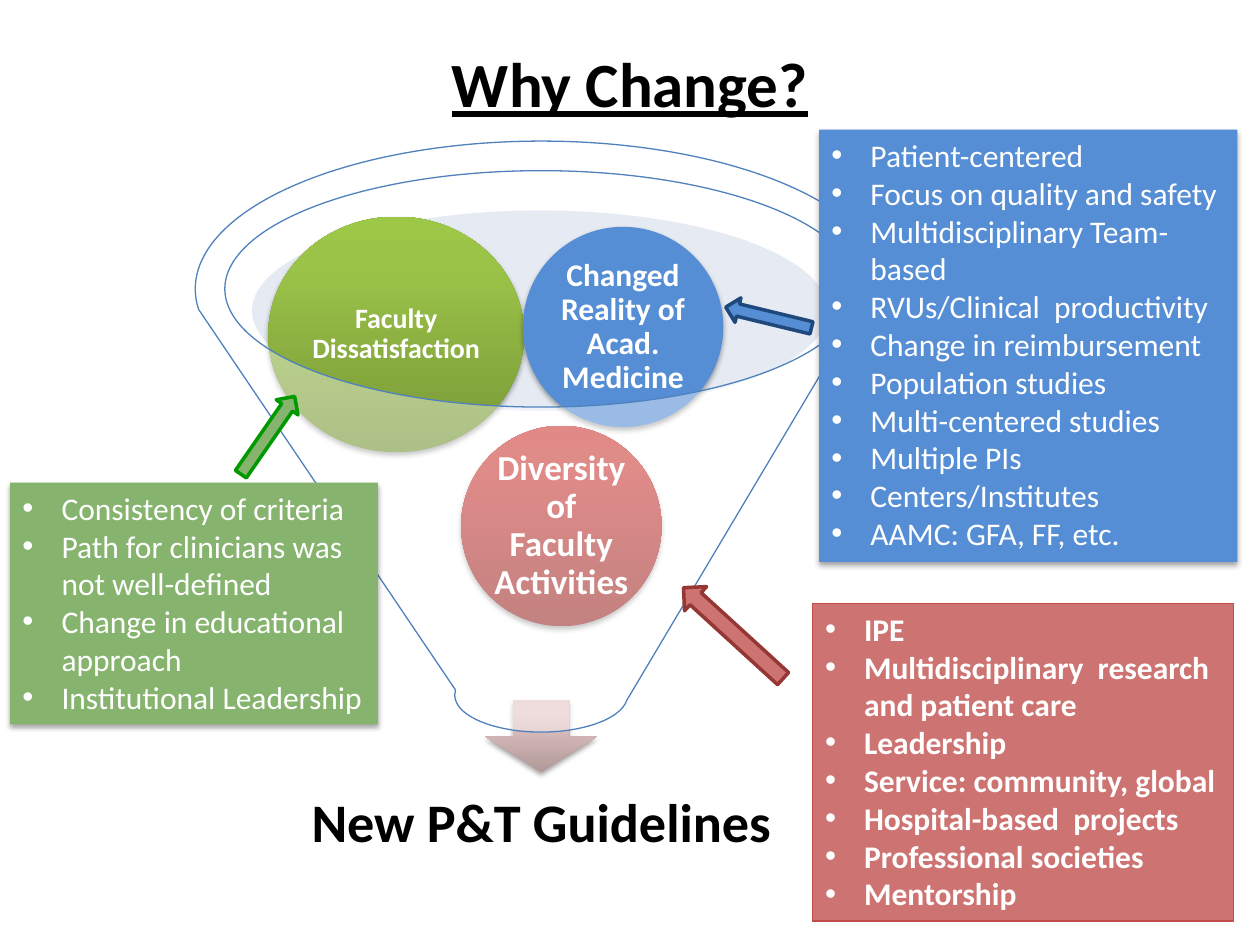
from copy import deepcopy

from lxml import etree
from pptx import Presentation
from pptx.dml.color import RGBColor
from pptx.enum.shapes import MSO_SHAPE
from pptx.enum.text import MSO_ANCHOR, MSO_AUTO_SIZE, PP_ALIGN
from pptx.oxml.ns import qn
from pptx.util import Inches, Pt

OVAL, RECT, FUNNEL = MSO_SHAPE.OVAL, MSO_SHAPE.RECTANGLE, MSO_SHAPE.FUNNEL
DOWN, LEFT, UP = MSO_SHAPE.DOWN_ARROW, MSO_SHAPE.LEFT_ARROW, MSO_SHAPE.UP_ARROW
TOP, MIDDLE = MSO_ANCHOR.TOP, MSO_ANCHOR.MIDDLE
START, CENTER = PP_ALIGN.LEFT, PP_ALIGN.CENTER
FIT = MSO_AUTO_SIZE.SHAPE_TO_FIT_TEXT
FONT = "Calibri"
WHITE, BLACK = "FFFFFF", "000000"
GREEN, BLUE, RED = "86B36D", "558ED5", "CD7371"

NEEDS = [
    "Consistency of criteria",
    "Path for clinicians was not well-defined",
    "Change in educational approach",
    "Institutional Leadership",
]
TRENDS = [
    "Patient-centered",
    "Focus on quality and safety",
    "Multidisciplinary Team-based",
    "RVUs/Clinical  productivity",
    "Change in reimbursement",
    "Population studies",
    "Multi-centered studies",
    "Multiple PIs",
    "Centers/Institutes",
    "AAMC: GFA, FF, etc.",
]
WORK = [
    "IPE",
    "Multidisciplinary  research and patient care",
    "Leadership",
    "Service: community, global",
    "Hospital-based  projects",
    "Professional societies",
    "Mentorship",
]


def color(code):
    """Turn a hex string into a colour."""
    return RGBColor.from_string(code)


def node(parent, tag, **attrs):
    """Add a drawing element with its attributes."""
    return etree.SubElement(parent, qn(tag), {k: str(v) for k, v in attrs.items()})


def write(frame, lines, size=18, ink=WHITE, bold=False, under=False, align=CENTER,
          anchor=MIDDLE, inset=None, gap=None, bullet=False):
    """Fill a text frame with formatted paragraphs."""
    frame.word_wrap = True
    frame.vertical_anchor = anchor
    if inset is not None:
        frame.margin_left = frame.margin_right = Inches(inset)
        frame.margin_top = frame.margin_bottom = Inches(inset)
    for i, line in enumerate(lines):
        para = frame.add_paragraph() if i else frame.paragraphs[0]
        para.alignment = align
        if gap:
            para.line_spacing = gap
        if bullet:
            props = para._p.get_or_add_pPr()
            props.set("marL", str(Inches(0.31)))
            props.set("indent", str(-Inches(0.31)))
            node(props, "a:buFont", typeface="Arial")
            node(props, "a:buChar", char="•")
        run = para.add_run()
        run.text = line
        font = run.font
        font.name, font.size, font.bold, font.underline = FONT, Pt(size), bold, under
        font.color.rgb = color(ink)


def shade(shape, stops):
    """Give a shape a vertical three-stop gradient, first colour lowest."""
    fill = shape.fill
    fill.gradient()
    fill.gradient_angle = 90
    first = shape._element.spPr.find(".//" + qn("a:gs"))
    first.addnext(deepcopy(first))
    for stop, code, place in zip(fill.gradient_stops, stops, (0, 0.8, 1)):
        stop.color.rgb = color(code)
        stop.position = place


def draw(slide, kind, box, fill, line=None, width=0.75, alpha=None, turn=0, drop=False):
    """Add a preset shape with a plain or graded fill."""
    shape = slide.shapes.add_shape(kind, *map(Inches, box))
    shape.rotation = turn
    if isinstance(fill, str):
        shape.fill.solid()
        shape.fill.fore_color.rgb = color(fill)
    else:
        shade(shape, fill)
    if alpha:
        tint = shape._element.spPr.find(".//" + qn("a:srgbClr"))
        node(tint, "a:alpha", val=alpha * 1000)
    if line:
        shape.line.color.rgb = color(line)
        shape.line.width = Pt(width)
    else:
        shape.line.fill.background()
    shape.shadow.inherit = False
    if drop:
        effect = shape._element.spPr.find(qn("a:effectLst"))
        cast = node(effect, "a:outerShdw", blurRad=Pt(3.1), dist=Pt(1.8),
                    dir=5400000, rotWithShape=0)
        node(node(cast, "a:srgbClr", val=BLACK), "a:alpha", val=35000)
    return shape


def ball(slide, box, fill, label, size):
    """Add a labelled circle in the funnel."""
    shape = draw(slide, OVAL, box, fill, drop=True)
    write(shape.text_frame, [label], size=size, bold=True, inset=0.03, gap=0.9)


def panel(slide, box, fill, lines, line=None, bold=False):
    """Add a filled box that holds a bullet list."""
    shape = draw(slide, RECT, box, fill, line=line, drop=line is None)
    write(shape.text_frame, lines, bold=bold, align=START, anchor=TOP, bullet=True)
    shape.text_frame.auto_size = FIT


def title(slide, text):
    """Place and write the slide title."""
    head = slide.shapes.title
    head.left, head.top, head.width, head.height = map(Inches, (0.5, 0.03, 9, 1.25))
    write(head.text_frame, [text], size=36, ink=BLACK, bold=True, under=True)


def funnel(slide):
    """Draw the funnel, its contents and its outcome."""
    draw(slide, OVAL, (2, 1.67, 4.57, 1.59), "C2CDE1", alpha=40)
    draw(slide, DOWN, (3.85, 5.56, 0.89, 0.57), ("B09998", "E5C6C6", "E6C7C6"), drop=True)
    goal = slide.shapes.add_textbox(*map(Inches, (2.17, 6.03, 4.25, 1.03)))
    write(goal.text_frame, ["New P&T Guidelines"], size=31, ink=BLACK, bold=True,
          inset=0.24, gap=0.9)
    ball(slide, (3.66, 3.38, 1.59, 1.59), ("9C2F2D", "CB3E3A", "CE3B37"),
         "Diversity of Faculty Activities", 20)
    ball(slide, (2.13, 1.72, 2.03, 1.87), ("779737", "9BC348", "9DC746"),
         "Faculty Dissatisfaction", 16)
    ball(slide, (4.15, 1.8, 1.59, 1.59), BLUE, "Changed Reality of Acad. Medicine", 18)
    draw(slide, FUNNEL, (1.55, 1.12, 5.49, 4.69), WHITE, line="4F81BD", alpha=40)


def main():
    """Build and save the slide."""
    deck = Presentation()
    deck.slide_width, deck.slide_height = Inches(10), Inches(7.5)
    slide = deck.slides.add_slide(deck.slide_layouts[5])
    title(slide, "Why Change?")
    funnel(slide)
    panel(slide, (0.08, 3.83, 2.92, 1.92), GREEN, NEEDS)
    panel(slide, (6.5, 1.03, 3.32, 3.43), BLUE, TRENDS)
    panel(slide, (6.45, 4.79, 3.34, 2.52), RED, WORK, line="BF4C48", bold=True)
    draw(slide, LEFT, (1.75, 3.35, 0.75, 0.21), GREEN, line="009900", width=2, turn=124.7)
    draw(slide, LEFT, (5.75, 2.42, 0.7, 0.2), BLUE, line="1F497D", width=2, turn=13.6)
    draw(slide, UP, (5.69, 4.49, 0.26, 1.07), RED, line="953735", width=2, turn=312.4)
    deck.save("out.pptx")


if __name__ == "__main__":
    main()
